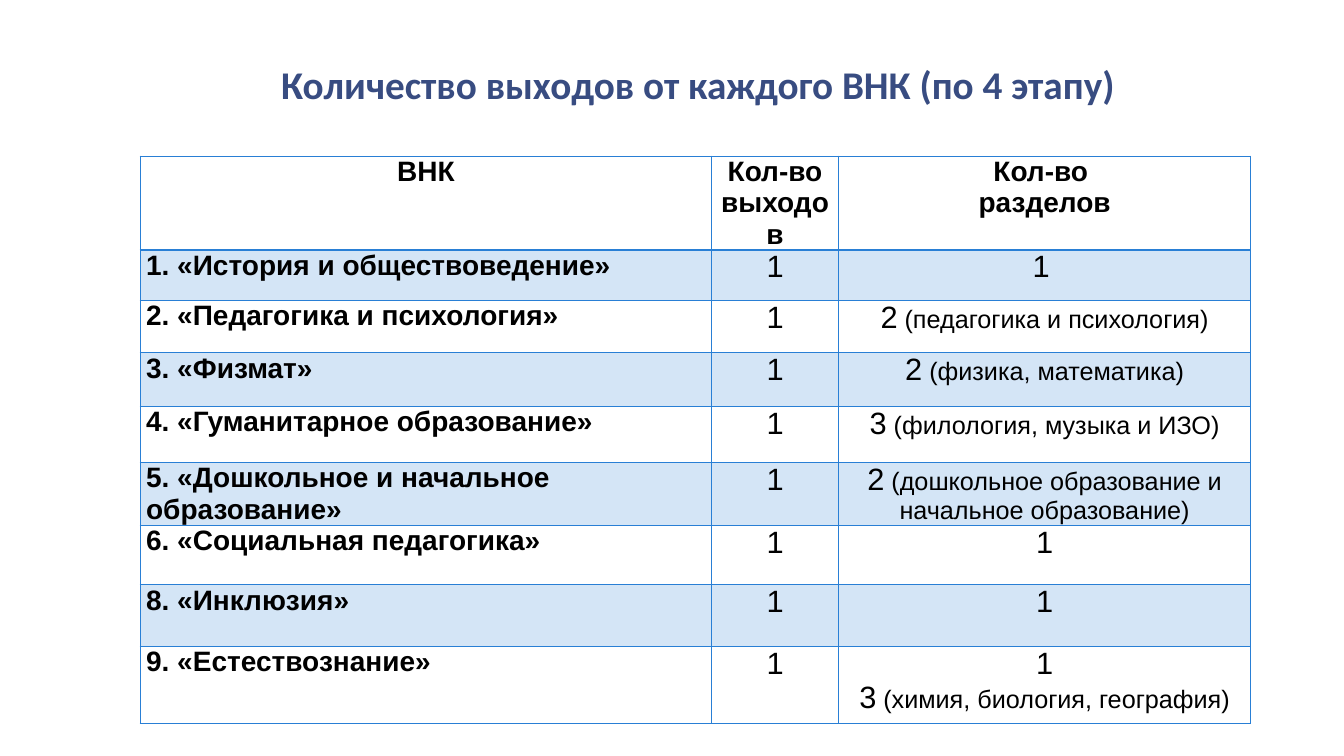
from lxml import etree
from pptx import Presentation
from pptx.dml.color import RGBColor
from pptx.enum.text import MSO_AUTO_SIZE, PP_ALIGN
from pptx.oxml.ns import qn
from pptx.util import Pt

CENTER, LEFT = PP_ALIGN.CENTER, PP_ALIGN.LEFT
FIT_SHAPE = MSO_AUTO_SIZE.SHAPE_TO_FIT_TEXT
BLACK = RGBColor(0x00, 0x00, 0x00)
NAVY = RGBColor(0x38, 0x4C, 0x81)
BLUE = RGBColor(0x29, 0x7F, 0xD5)

COL_WIDTHS = [408.2, 90.7, 294.5]
ROW_HEIGHTS = [37.4, 36, 37.4, 38.2, 40.3, 32.4, 42.5, 43.9, 55.4]
HEADERS = ["ВНК", "Кол-во выходов", "Кол-во \nразделов"]
GROUPS = [
    ("1. «История и обществоведение»", [("1", " ")]),
    ("2. «Педагогика и психология»", [("2", " (педагогика и психология)")]),
    ("3. «Физмат»", [("2", " (физика, математика)")]),
    ("4. «Гуманитарное образование»", [("3", " (филология, музыка и ИЗО)")]),
    ("5. «Дошкольное и начальное образование»",
     [("2", " (дошкольное образование и начальное образование)")]),
    ("6. «Социальная педагогика»", [("1", "")]),
    ("8. «Инклюзия»", [("1", "")]),
    ("9. «Естествознание»", [("1", ""), ("3", " (химия, биология, география)")]),
]


def style_font(font, size, bold, name="Arial", color=BLACK):
    """Set size, weight, typeface and colour of a font."""
    font.size, font.bold, font.name = Pt(size), bold, name
    font.color.rgb = color


def add_title(slide, text):
    """Add the slide title, shifted right by a leading tab."""
    sp = slide.shapes.add_textbox(Pt(117.4), Pt(39.6), Pt(725.8), Pt(41))
    tf = sp.text_frame
    tf.word_wrap = True
    tf.auto_size = FIT_SHAPE
    p = tf.paragraphs[0]
    p.alignment = CENTER
    for content, size, name, color in [("\t", 16, "Arial", BLACK),
                                       (text, 28, "Calibri", NAVY)]:
        r = p.add_run()
        r.text = content
        style_font(r.font, size, True, name, color)


def set_borders(cell, top, bottom):
    """Draw blue borders on all four sides of a cell."""
    tc_pr = cell._tc.get_or_add_tcPr()
    sides = [("a:lnL", 1), ("a:lnR", 1), ("a:lnT", top), ("a:lnB", bottom)]
    for i, (tag, width) in enumerate(sides):
        ln = etree.Element(qn(tag), w=str(Pt(width)))
        fill = etree.SubElement(ln, qn("a:solidFill"))
        etree.SubElement(fill, qn("a:srgbClr"), val=str(BLUE))
        tc_pr.insert(i, ln)


def shade(cell, tinted):
    """Fill a cell with translucent blue or leave it clear."""
    if not tinted:
        cell.fill.background()
        return
    cell.fill.solid()
    cell.fill.fore_color.rgb = BLUE
    color = cell._tc.tcPr.find(".//" + qn("a:srgbClr"))
    etree.SubElement(color, qn("a:alpha"), val="20000")


def write_bold(cell, text, alignment):
    """Write bold text into a cell."""
    cell.text = text
    for p in cell.text_frame.paragraphs:
        p.alignment = alignment
        style_font(p.font, 20, True)


def write_counts(cell, counts):
    """Write one centred line per count, with its note in smaller type."""
    tf = cell.text_frame
    for i, parts in enumerate(counts):
        p = tf.add_paragraph() if i else tf.paragraphs[0]
        p.alignment = CENTER
        for text, size in zip(parts, (22, 18)):
            if text:
                r = p.add_run()
                r.text = text
                style_font(r.font, size, False)


def add_groups_table(slide):
    """Add the table of groups with their outputs and sections."""
    table = slide.shapes.add_table(
        len(ROW_HEIGHTS), len(COL_WIDTHS), Pt(100.1), Pt(111.6),
        Pt(sum(COL_WIDTHS)), Pt(sum(ROW_HEIGHTS))).table
    for column, width in zip(table.columns, COL_WIDTHS):
        column.width = Pt(width)
    for i, (row, height) in enumerate(zip(table.rows, ROW_HEIGHTS)):
        row.height = Pt(height)
        for cell in row.cells:
            cell.margin_left = cell.margin_right = Pt(4.3)
            cell.margin_top = cell.margin_bottom = 0
            shade(cell, i % 2 == 1)
            set_borders(cell, 2 if i == 1 else 1, 2 if i == 0 else 1)
    for col, header in enumerate(HEADERS):
        write_bold(table.cell(0, col), header, CENTER)
    for i, (name, sections) in enumerate(GROUPS, 1):
        write_bold(table.cell(i, 0), name, LEFT)
        write_counts(table.cell(i, 1), [("1", "")])
        write_counts(table.cell(i, 2), sections)


def main():
    """Build the slide and save it."""
    prs = Presentation()
    prs.slide_width, prs.slide_height = Pt(960), Pt(540)
    s = prs.slides.add_slide(prs.slide_layouts[6])
    add_groups_table(s)
    add_title(s, "Количество выходов от каждого ВНК (по 4 этапу)")
    prs.save("out.pptx")


if __name__ == "__main__":
    main()
